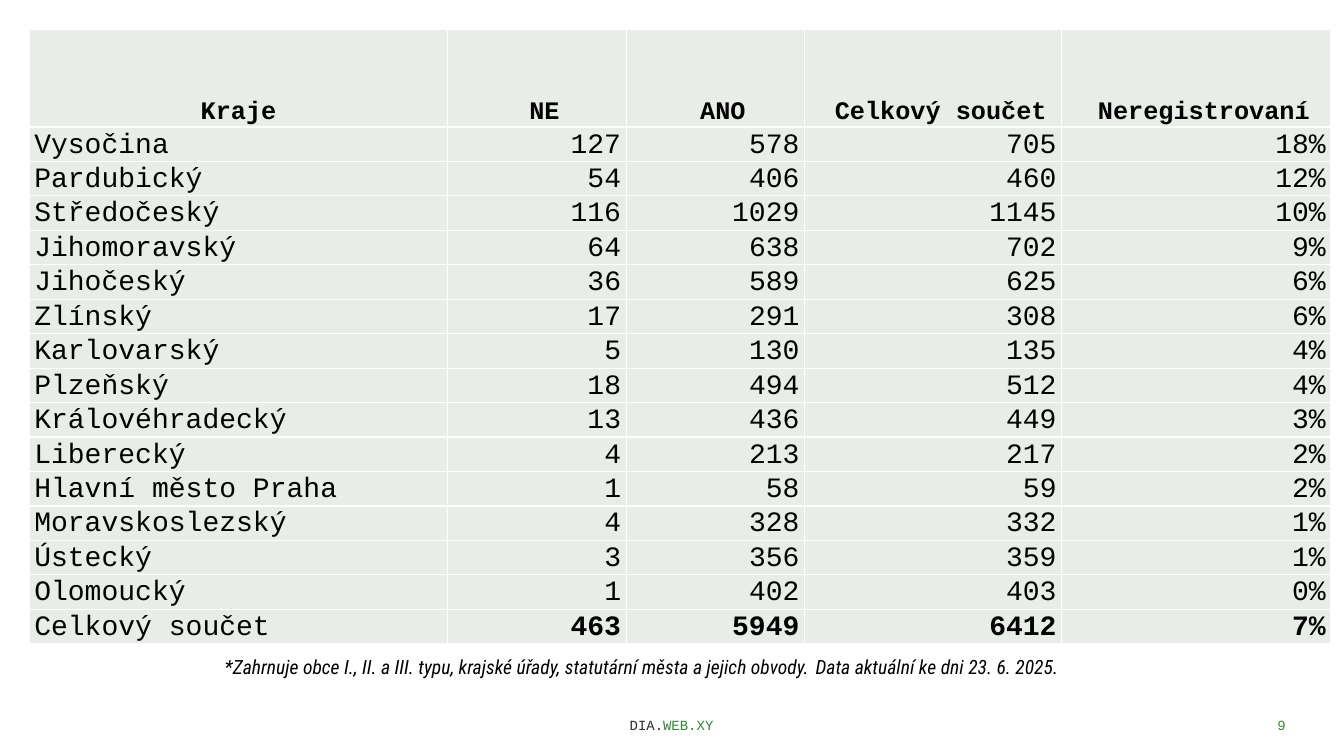
from dataclasses import dataclass
from lxml.etree import SubElement
from pptx import Presentation
from pptx.dml.color import RGBColor
from pptx.enum.text import MSO_ANCHOR, PP_ALIGN
from pptx.oxml.ns import qn
from pptx.util import Inches, Pt


@dataclass
class Theme:
    mono: str = "Courier New"
    sans: str = "Roboto Condensed"
    black: str = "000000"
    dark: str = "2E2C2B"
    green: str = "368537"
    pale: str = "E8EDE8"
    white: str = "FFFFFF"
    head: int = 18
    body: int = 20
    note: int = 14
    foot: int = 10


def write(para, text, font, size, color, bold=False, italic=False):
    run = para.add_run()
    run.text = text
    run.font.name = font
    run.font.size = Pt(size)
    run.font.color.rgb = RGBColor.from_string(color)
    run.font.bold = bold
    run.font.italic = italic


class Board:
    def __init__(self, slide, theme):
        self.slide = slide
        self.theme = theme

    def text(self, area, parts, align=PP_ALIGN.LEFT, anchor=MSO_ANCHOR.TOP, **style):
        box = self.slide.shapes.add_textbox(*map(Inches, area))
        frame = box.text_frame
        frame.word_wrap = True
        frame.vertical_anchor = anchor
        para = frame.paragraphs[0]
        para.alignment = align
        for text, form in parts:
            write(para, text, **{**style, **form})

    def border(self, cell):
        props = cell._tc.get_or_add_tcPr()
        for side in ("a:lnL", "a:lnR", "a:lnT", "a:lnB"):
            line = SubElement(props, qn(side), w=str(Pt(1)))
            fill = SubElement(line, qn("a:solidFill"))
            SubElement(fill, qn("a:srgbClr"), val=self.theme.white)

    def cell(self, cell, text, align, pad, **style):
        self.border(cell)
        cell.fill.solid()
        cell.fill.fore_color.rgb = RGBColor.from_string(self.theme.pale)
        cell.vertical_anchor = MSO_ANCHOR.BOTTOM
        side, top = map(Inches, pad)
        cell.margin_left = cell.margin_right = side
        cell.margin_top = top
        cell.margin_bottom = 0
        para = cell.text_frame.paragraphs[0]
        para.alignment = align
        write(para, text, font=self.theme.mono, color=self.theme.black, **style)

    def table(self, area, rows, widths, first):
        frame = self.slide.shapes.add_table(len(rows), len(widths), *map(Inches, area))
        table = frame.table
        table.horz_banding = False
        for col, width in zip(table.columns, widths):
            col.width = Inches(width)
        step = (area[3] - first) / (len(rows) - 1)
        for r, row in enumerate(rows):
            table.rows[r].height = Inches(step if r else first)
            for c, text in enumerate(row):
                if r == 0:
                    align, pad, size = PP_ALIGN.CENTER, (0.01, 0.01), self.theme.head
                else:
                    align = PP_ALIGN.RIGHT if c else PP_ALIGN.LEFT
                    pad, size = (0.05, 0), self.theme.body
                bold = r == 0 or (r == len(rows) - 1 and c > 0)
                self.cell(table.cell(r, c), text, align, pad, size=size, bold=bold)


ROWS = [
    ("Kraje", " NE", " ANO", " Celkový součet", " Neregistrovaní"),
    ("Vysočina", "127", "578", "705", "18%"),
    ("Pardubický", "54", "406", "460", "12%"),
    ("Středočeský", "116", "1029", "1145", "10%"),
    ("Jihomoravský", "64", "638", "702", "9%"),
    ("Jihočeský", "36", "589", "625", "6%"),
    ("Zlínský", "17", "291", "308", "6%"),
    ("Karlovarský", "5", "130", "135", "4%"),
    ("Plzeňský", "18", "494", "512", "4%"),
    ("Královéhradecký", "13", "436", "449", "3%"),
    ("Liberecký", "4", "213", "217", "2%"),
    ("Hlavní město Praha", "1", "58", "59", "2%"),
    ("Moravskoslezský", "4", "328", "332", "1%"),
    ("Ústecký", "3", "356", "359", "1%"),
    ("Olomoucký", "1", "402", "403", "0%"),
    ("Celkový součet", "463", "5949", "6412", "7%"),
]


def main():
    deck = Presentation()
    deck.slide_width = Inches(13.33)
    deck.slide_height = Inches(7.5)
    theme = Theme()
    board = Board(deck.slides.add_slide(deck.slide_layouts[6]), theme)
    foot = dict(font=theme.mono, size=theme.foot, color=theme.green,
                anchor=MSO_ANCHOR.BOTTOM)
    board.text((3.72, 6.92, 5.88, 0.4),
               [("DIA.", {"color": theme.dark}), ("WEB.XY", {})],
               align=PP_ALIGN.CENTER, **foot)
    board.text((10.75, 6.92, 2.1, 0.4), [("9", {})], align=PP_ALIGN.RIGHT, **foot)
    board.table((0.29, 0.29, 12.91, 6.1), ROWS, (4.15, 1.77, 1.77, 2.55, 2.67), 0.97)
    board.text((2.13, 6.39, 10.98, 0.4), [
        ("*Zahrnuje obce I., II. a III. typu, krajské úřady, "
         "statutární města a jejich obvody.", {}),
        (" ", {"size": theme.head}),
        ("Data aktuální ke dni 23. 6. 2025.", {}),
    ], font=theme.sans, size=theme.note, color=theme.black, italic=True)
    deck.save("out.pptx")


if __name__ == "__main__":
    main()
